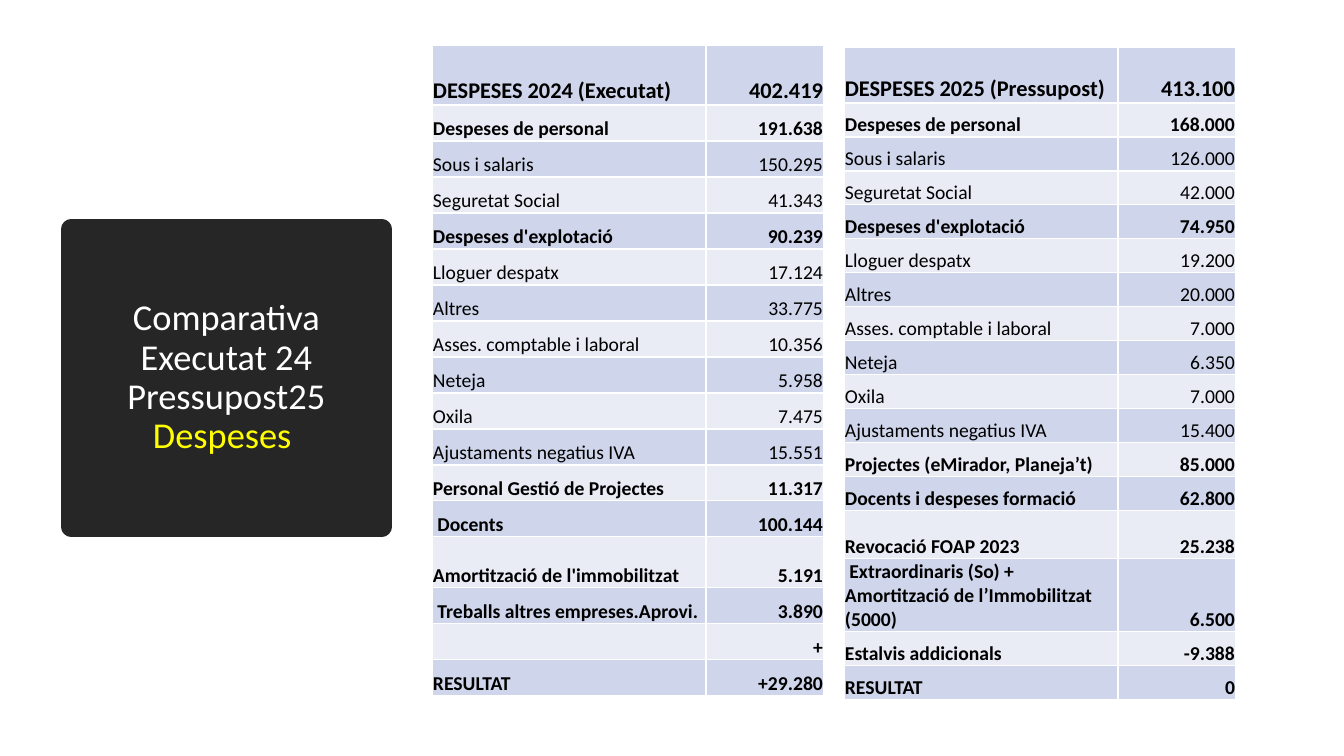
from dataclasses import dataclass
from typing import Any

from pptx import Presentation
from pptx.dml.color import RGBColor
from pptx.enum.text import MSO_ANCHOR as Anchor, MSO_AUTO_SIZE as Fit, PP_ALIGN as Align
from pptx.oxml import parse_xml
from pptx.oxml.ns import nsdecls
from pptx.util import Emu, Pt

SCALE = 914400 / 100.8
PLAIN = {2, 3, 5, 6, 7, 8, 9, 10}
BANDS = "CFD5EA", "E9EBF5"

SPENT = [
    ("DESPESES 2024 (Executat)", "402.419"),
    ("Despeses de personal", "191.638"),
    ("Sous i salaris", "150.295"),
    ("Seguretat Social", "41.343"),
    ("Despeses d'explotació", "90.239"),
    ("Lloguer despatx", "17.124"),
    ("Altres", "33.775"),
    ("Asses. comptable i laboral", "10.356"),
    ("Neteja", "5.958"),
    ("Oxila", "7.475"),
    ("Ajustaments negatius IVA", "15.551"),
    ("Personal Gestió de Projectes", "11.317"),
    (" Docents", "100.144"),
    ("Amortització de l'immobilitzat", "5.191"),
    (" Treballs altres empreses.Aprovi.", "3.890"),
    ("", "+"),
    ("RESULTAT", "+29.280"),
]
BUDGET = [
    ("DESPESES 2025 (Pressupost)", "413.100"),
    ("Despeses de personal", "168.000"),
    ("Sous i salaris", "126.000"),
    ("Seguretat Social", "42.000"),
    ("Despeses d'explotació", "74.950"),
    ("Lloguer despatx", "19.200"),
    ("Altres", "20.000"),
    ("Asses. comptable i laboral", "7.000"),
    ("Neteja", "6.350"),
    ("Oxila", "7.000"),
    ("Ajustaments negatius IVA", "15.400"),
    ("Projectes (eMirador, Planeja’t)", "85.000"),
    ("Docents i despeses formació", "62.800"),
    ("Revocació FOAP 2023", "25.238"),
    (" Extraordinaris (So) + Amortització de l’Immobilitzat (5000)", "6.500"),
    ("Estalvis addicionals", "-9.388"),
    ("RESULTAT", "0"),
]


def px(n):
    return Emu(round(n * SCALE))


def color(text):
    return RGBColor.from_string(text)


def assign(item, **values):
    for name, value in values.items():
        setattr(item, name, value)


def paint(fill, tone):
    fill.solid()
    fill.fore_color.rgb = color(tone)


@dataclass
class Deck:
    slide: Any
    font: str = "Calibri"
    rule: str = "FFFFFF"

    def label(self, para, text, size, tone, bold=False):
        run = para.add_run()
        run.text = text
        assign(run.font, name=self.font, size=Pt(size), bold=bold)
        run.font.color.rgb = color(tone)

    def title(self, box, parts, tone, size):
        shape = self.slide.shapes.title
        left, top, width, height = map(px, box)
        assign(shape, left=left, top=top, width=width, height=height)
        shape._element.spPr.append(parse_xml(
            f'<a:prstGeom {nsdecls("a")} prst="ellipse"><a:avLst/></a:prstGeom>'))
        paint(shape.fill, tone)
        paint(shape.line.fill, tone)
        shape.line.width = Pt(13.75)
        frame = shape.text_frame
        assign(frame, word_wrap=True, auto_size=Fit.NONE, vertical_anchor=Anchor.MIDDLE)
        para = frame.paragraphs[0]
        assign(para, alignment=Align.CENTER, line_spacing=0.9)
        for text, ink in parts:
            self.label(para, text, size, ink)

    def border(self, cell):
        props = cell._tc.get_or_add_tcPr()
        for side in "LRTB":
            props.append(parse_xml(
                f'<a:ln{side} {nsdecls("a")} w="12700"><a:solidFill>'
                f'<a:srgbClr val="{self.rule}"/></a:solidFill></a:ln{side}>'))

    def table(self, left, top, rows, step, special):
        """Draw a two-column table; special maps a row index to its own height."""
        sizes = [special.get(i, step) for i in range(len(rows))]
        widths = 274, 118
        grid = self.slide.shapes.add_table(
            len(rows), 2, px(left), px(top), px(sum(widths)), px(sum(sizes))).table
        assign(grid, first_row=False, horz_banding=False)
        for col, width in zip(grid.columns, widths):
            col.width = px(width)
        for i, row in enumerate(rows):
            grid.rows[i].height = px(sizes[i])
            for j, text in enumerate(row):
                cell = grid.cell(i, j)
                self.border(cell)
                paint(cell.fill, BANDS[i % 2])
                assign(cell, margin_left=px(1), margin_right=px(1), margin_top=px(1),
                       margin_bottom=0, vertical_anchor=Anchor.BOTTOM)
                para = cell.text_frame.paragraphs[0]
                para.alignment = Align.RIGHT if j else Align.LEFT
                if text:
                    self.label(para, text, 14 if i else 16, "000000", i not in PLAIN)


def main():
    show = Presentation()
    assign(show, slide_width=px(1344), slide_height=px(756))
    deck = Deck(show.slides.add_slide(show.slide_layouts[5]))
    deck.title((71, 229, 311, 298),
               [("Comparativa Executat 24 Pressupost25 ", "FFFFFF"), ("Despeses ", "FFFF00")],
               "262626", 26)
    deck.table(844, 47, BUDGET, 34, {0: 56, 13: 48, 14: 73})
    deck.table(432, 45, SPENT, 36, {0: 60, 13: 51})
    show.save("out.pptx")


if __name__ == "__main__":
    main()
